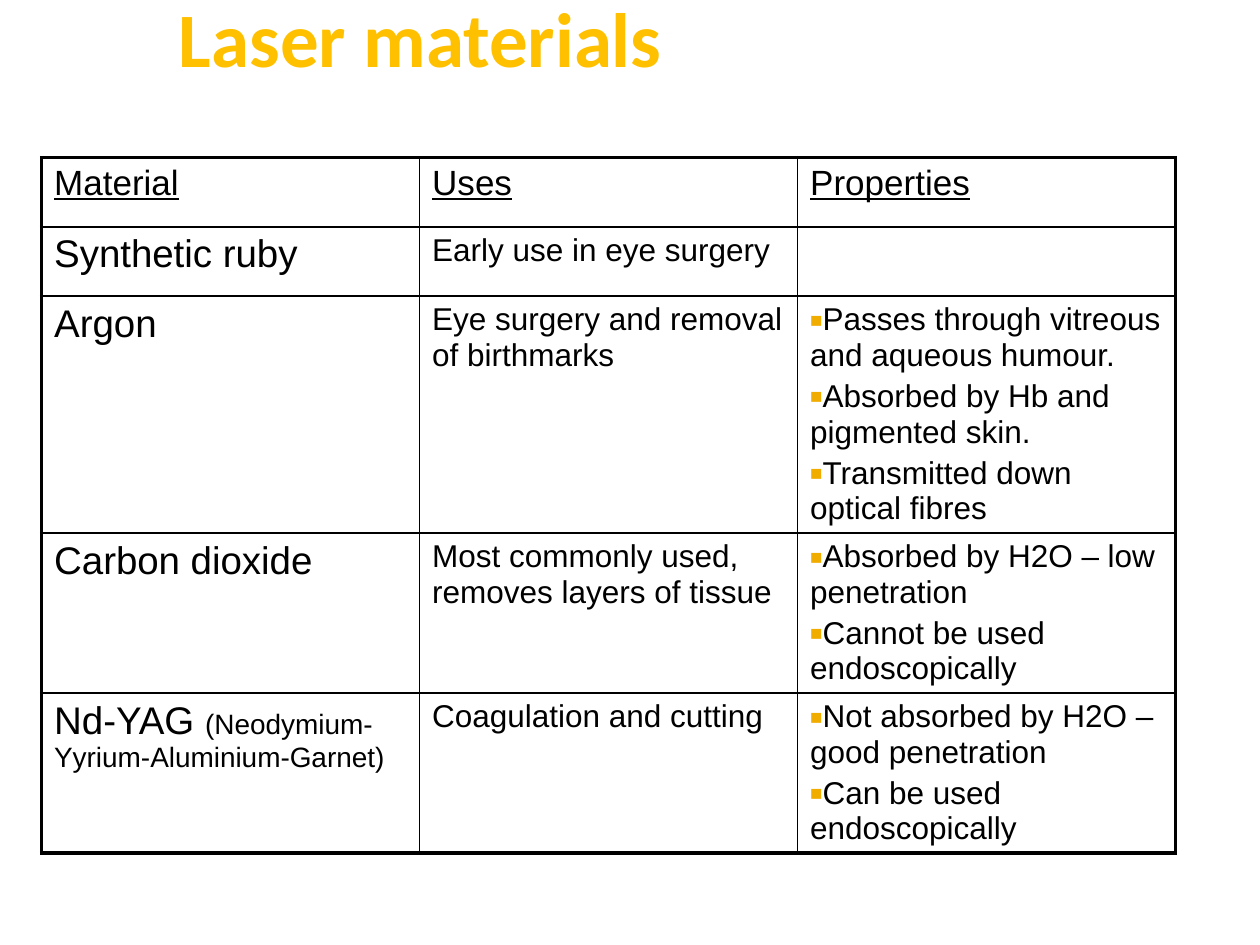
import lxml.etree
import pptx
import pptx.dml.color
import pptx.enum.text
import pptx.oxml.ns
import pptx.util

PX = 9144  # EMU per px, 100 px to the inch
BLACK, GOLD, AMBER = "000000", "FFC000", "F0AD00"
THIN, THICK = 1, 2.25
qn = pptx.oxml.ns.qn


def write(paragraph, text, size, color=BLACK, font="Arial", bold=False,
          underline=False, bullet=False, space_before=0):
    """Add a formatted run, with an optional square bullet on its paragraph."""
    run = paragraph.add_run()
    run.text = text
    run.font.size = pptx.util.Pt(size)
    run.font.name = font
    run.font.bold = bold
    run.font.underline = underline
    run.font.color.rgb = pptx.dml.color.RGBColor.from_string(color)
    if space_before:
        paragraph.space_before = pptx.util.Pt(space_before)
    if bullet:
        props = paragraph._p.get_or_add_pPr()
        bullet_color = lxml.etree.SubElement(props, qn("a:buClr"))
        lxml.etree.SubElement(bullet_color, qn("a:srgbClr"), val=AMBER)
        lxml.etree.SubElement(props, qn("a:buSzPct"), val="65000")
        lxml.etree.SubElement(props, qn("a:buFont"), typeface="Arial")
        lxml.etree.SubElement(props, qn("a:buChar"), char="■")


def set_borders(cell, widths):
    """Draw black lines on the left, right, top and bottom, widths in points."""
    props = cell._tc.get_or_add_tcPr()
    for side, width in zip("LRTB", widths):
        line = lxml.etree.SubElement(props, qn(f"a:ln{side}"),
                                     w=str(pptx.util.Pt(width)))
        fill = lxml.etree.SubElement(line, qn("a:solidFill"))
        lxml.etree.SubElement(fill, qn("a:srgbClr"), val=BLACK)


presentation = pptx.Presentation()
presentation.slide_width = 1000 * PX
presentation.slide_height = 750 * PX
slide = presentation.slides.add_slide(presentation.slide_layouts[5])

title = slide.shapes.title
title.left, title.top, title.width, title.height = 33 * PX, -33 * PX, 900 * PX, 125 * PX
title.text_frame.margin_left = 109 * PX
title.text_frame.vertical_anchor = pptx.enum.text.MSO_ANCHOR.MIDDLE
heading = title.text_frame.paragraphs[0]
heading.alignment = pptx.enum.text.PP_ALIGN.LEFT
write(heading, "Laser materials", 44, color=GOLD, font="Calibri", bold=True)

headers = ["Material", "Uses", "Properties"]
lasers = [
    ("Synthetic ruby", "", "Early use in eye surgery", []),
    ("Argon", "", "Eye surgery and removal of birthmarks",
     ["Passes through vitreous and aqueous humour.",
      "Absorbed by Hb and pigmented skin.",
      "Transmitted down optical fibres"]),
    ("Carbon dioxide", "", "Most commonly used, removes layers of tissue",
     ["Absorbed by H2O – low penetration",
      "Cannot be used endoscopically"]),
    ("Nd-YAG ", "(Neodymium- Yyrium-Aluminium-Garnet)", "Coagulation and cutting",
     ["Not absorbed by H2O – good penetration",
      "Can be used endoscopically"]),
]
row_heights = [55, 55, 188, 127, 127]

table = slide.shapes.add_table(len(row_heights), len(headers), 33 * PX, 125 * PX,
                               900 * PX, sum(row_heights) * PX).table
table.first_row = False
table.horz_banding = False
for column in table.columns:
    column.width = 300 * PX

last_row, last_column = len(row_heights) - 1, len(headers) - 1
for r, height in enumerate(row_heights):
    table.rows[r].height = height * PX
    for c in range(len(headers)):
        cell = table.cell(r, c)
        outer_sides = (c == 0, c == last_column, r == 0, r == last_row)
        set_borders(cell, [THICK if outer else THIN for outer in outer_sides])
        cell.fill.background()

for c, header in enumerate(headers):
    write(table.cell(0, c).text_frame.paragraphs[0], header, 20, underline=True)

for r, (material, full_name, use, properties) in enumerate(lasers, start=1):
    material_line = table.cell(r, 0).text_frame.paragraphs[0]
    write(material_line, material, 22)
    if full_name:
        write(material_line, full_name, 16)
    write(table.cell(r, 1).text_frame.paragraphs[0], use, 18)
    property_frame = table.cell(r, 2).text_frame
    for i, fact in enumerate(properties):
        paragraph = property_frame.add_paragraph() if i else property_frame.paragraphs[0]
        write(paragraph, fact, 18, bullet=True, space_before=3.6 if i else 0)

presentation.save("out.pptx")
